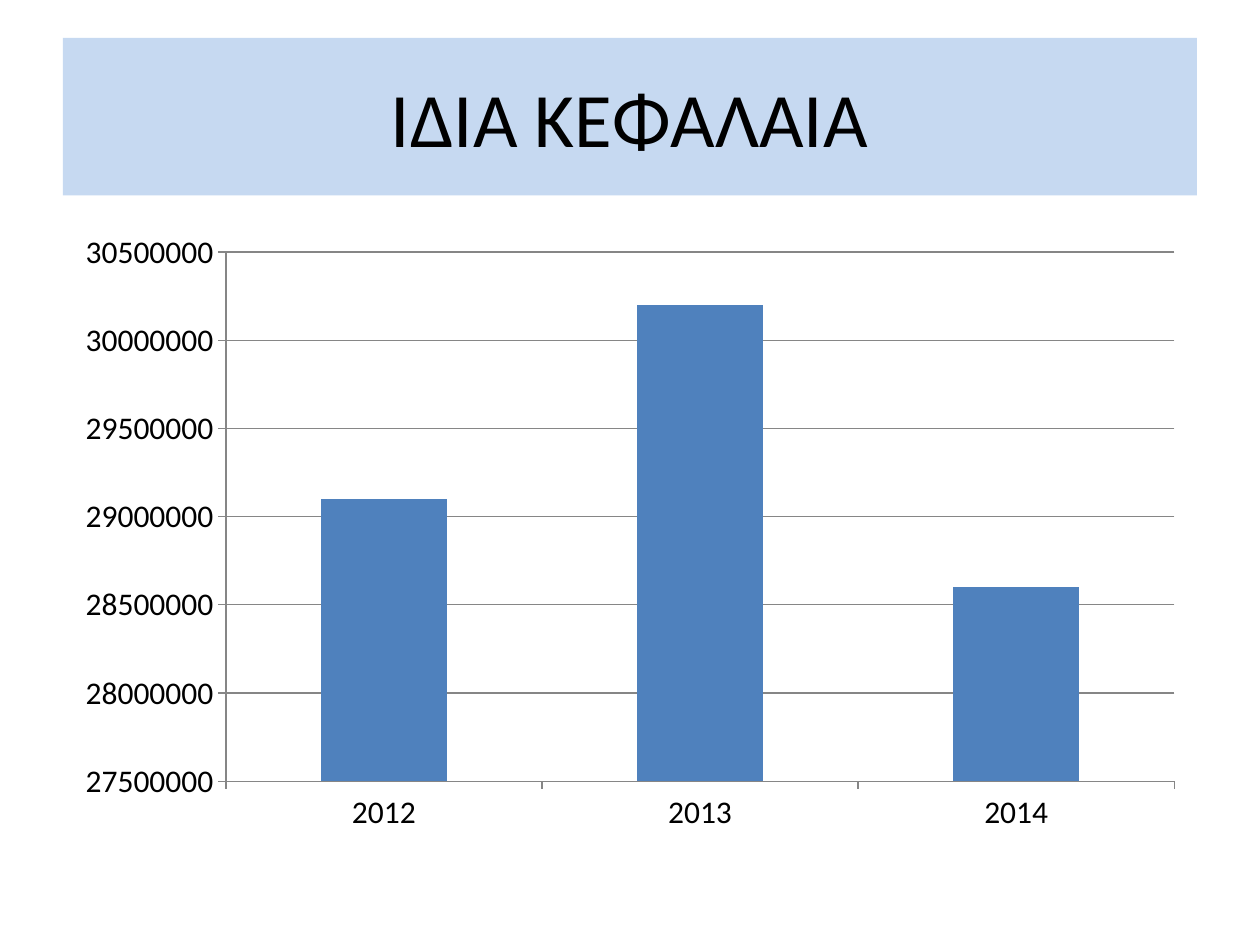
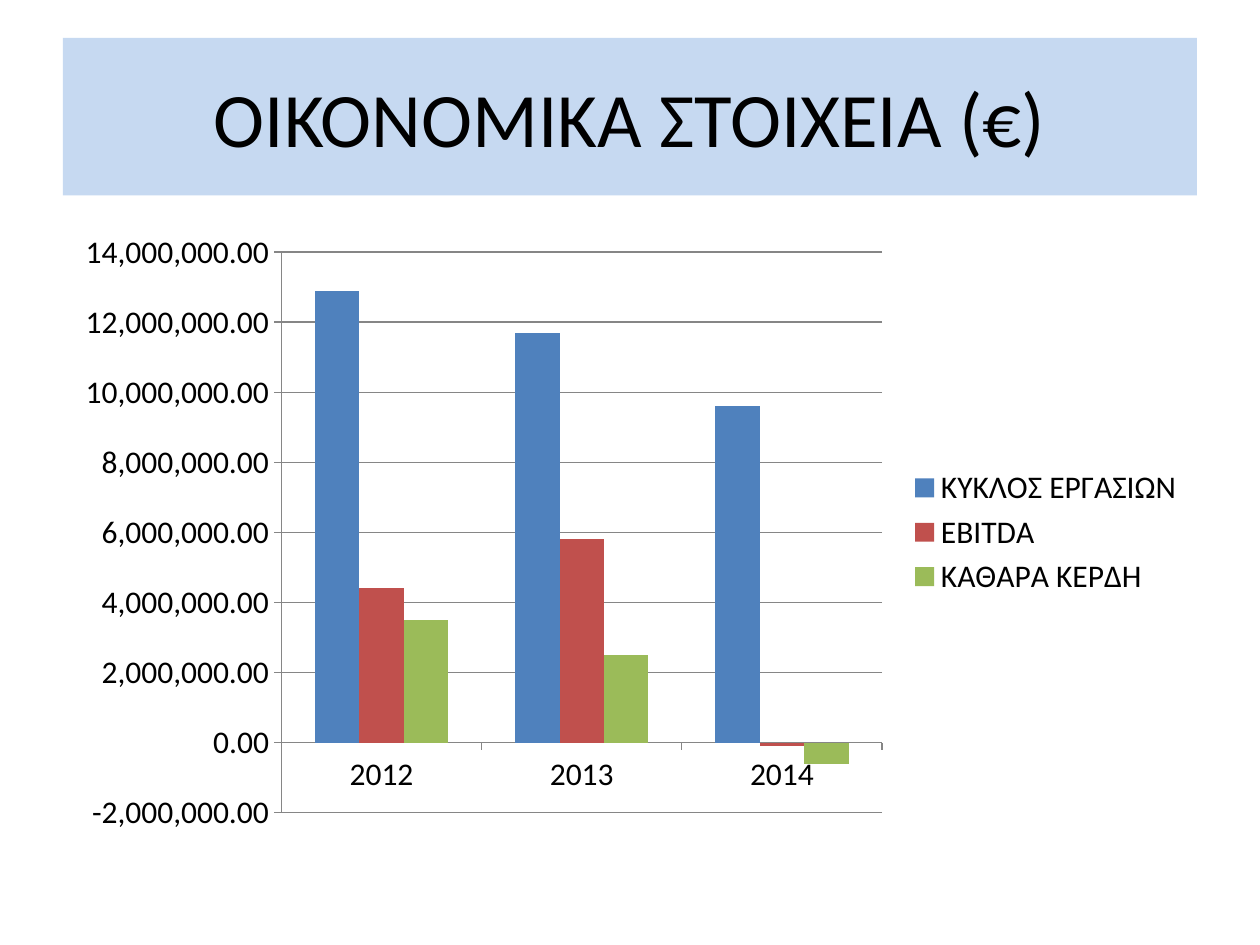
from pptx import Presentation
from pptx.chart.data import CategoryChartData
from pptx.dml.color import RGBColor
from pptx.enum.chart import XL_CHART_TYPE, XL_LEGEND_POSITION, XL_TICK_MARK
from pptx.enum.shapes import MSO_SHAPE
from pptx.enum.text import MSO_ANCHOR, PP_ALIGN
from pptx.util import Pt

COLUMN = XL_CHART_TYPE.COLUMN_CLUSTERED
RIGHT = XL_LEGEND_POSITION.RIGHT
OUTSIDE, NO_TICK = XL_TICK_MARK.OUTSIDE, XL_TICK_MARK.NONE
RECT = MSO_SHAPE.RECTANGLE
MIDDLE = MSO_ANCHOR.MIDDLE
CENTER = PP_ALIGN.CENTER

COLORS = {"band": "C6D9F1", "text": "000000", "line": "868686",
          "blue": "4F81BD", "red": "C0504D", "green": "9BBB59"}
SERIES_COLORS = ("blue", "red", "green")
FONT = "Calibri"
LEFT, WIDTH = 36, 648
YEARS = ("2012", "2013", "2014")

EQUITY = {"Series 1": (29100000, 30200000, 28600000)}
EQUITY_SCALE = {"minimum_scale": 27500000, "maximum_scale": 30500000,
                "major_unit": 500000}
RESULTS = {
    "ΚΥΚΛΟΣ ΕΡΓΑΣΙΩΝ": (12900000, 11700000, 9600000),
    "EBITDA": (4400000, 5800000, -100000),
    "ΚΑΘΑΡΑ ΚΕΡΔΗ": (3500000, 2500000, -600000),
}
RESULTS_SCALE = {"minimum_scale": -2000000, "maximum_scale": 14000000,
                 "major_unit": 2000000}


def rgb(name):
    return RGBColor.from_string(COLORS[name])


def apply(target, values):
    for name, value in values.items():
        setattr(target, name, value)


def style_font(font, size):
    apply(font, {"name": FONT, "size": Pt(size), "bold": False})
    font.color.rgb = rgb("text")


def style_line(line):
    line.color.rgb = rgb("line")
    line.width = Pt(0.75)


def add_title(s, text):
    sp = s.shapes.add_shape(RECT, Pt(LEFT), Pt(21.6), Pt(WIDTH), Pt(90))
    sp.shadow.inherit = False
    sp.fill.solid()
    sp.fill.fore_color.rgb = rgb("band")
    sp.line.fill.background()
    tf = sp.text_frame
    apply(tf, {"word_wrap": True, "vertical_anchor": MIDDLE})
    p = tf.paragraphs[0]
    p.alignment = CENTER
    r = p.add_run()
    r.text = text
    style_font(r.font, 44)


def add_column_chart(s, series, scale, number_format):
    data = CategoryChartData(number_format=number_format)
    data.categories = YEARS
    for name, values in series.items():
        data.add_series(name, values)
    chart = s.shapes.add_chart(COLUMN, Pt(LEFT), Pt(126), Pt(WIDTH),
                               Pt(356.4), data).chart
    apply(chart, {"has_title": False, "has_legend": len(series) > 1})
    style_font(chart.font, 18)
    if chart.has_legend:
        apply(chart.legend, {"position": RIGHT, "include_in_layout": False})

    plot = chart.plots[0]
    apply(plot, {"gap_width": 150, "overlap": 0, "vary_by_categories": False})
    for ser, color in zip(plot.series, SERIES_COLORS):
        ser.invert_if_negative = False
        ser.format.fill.solid()
        ser.format.fill.fore_color.rgb = rgb(color)

    for axis in (chart.category_axis, chart.value_axis):
        apply(axis, {"major_tick_mark": OUTSIDE, "minor_tick_mark": NO_TICK})
        style_line(axis.format.line)
    axis = chart.value_axis
    apply(axis, {"has_major_gridlines": True, **scale})
    apply(axis.tick_labels, {"number_format": number_format,
                             "number_format_is_linked": False})
    style_line(axis.major_gridlines.format.line)


def add_chart_slide(prs, title, series, scale, number_format):
    s = prs.slides.add_slide(prs.slide_layouts[6])
    add_title(s, title)
    add_column_chart(s, series, scale, number_format)


def main():
    prs = Presentation()
    apply(prs, {"slide_width": Pt(720), "slide_height": Pt(540)})
    add_chart_slide(prs, "ΙΔΙΑ ΚΕΦΑΛΑΙΑ", EQUITY, EQUITY_SCALE, "General")
    add_chart_slide(prs, "ΟΙΚΟΝΟΜΙΚΑ ΣΤΟΙΧΕΙΑ (€)", RESULTS, RESULTS_SCALE,
                    "#,##0.00")
    prs.save("out.pptx")


if __name__ == "__main__":
    main()
